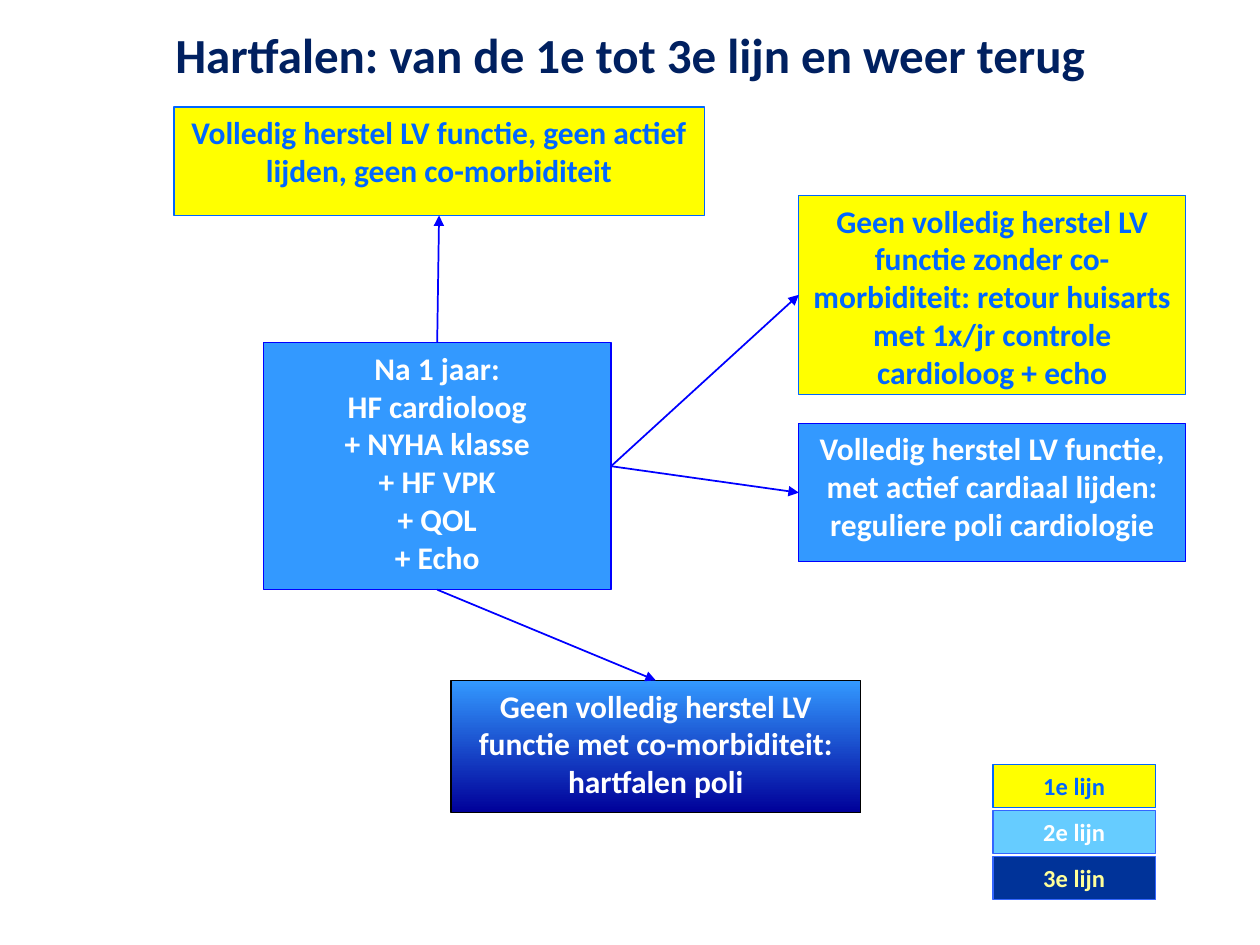
import dataclasses

import lxml.etree
import pptx
import pptx.dml.color
import pptx.enum.shapes
import pptx.enum.text
import pptx.oxml.ns
import pptx.util

COLUMNS, ROWS = 100, 75
CELL = pptx.util.Inches(0.1)
TOP, LEFT, BOTTOM, RIGHT = range(4)


def color(value):
    return pptx.dml.color.RGBColor.from_string(value)


@dataclasses.dataclass(frozen=True)
class Theme:
    font: str = "Calibri"
    title_size: int = 28
    step_size: int = 18
    legend_size: int = 14
    outline: float = 0.75
    arrow_width: float = 1
    arrow_color: str = "0000FF"
    title: tuple = ("FFFFFF", None, "002060")
    first_line: tuple = ("FFFF00", "0066FF", "0066FF")
    second_line: tuple = ("3399FF", "0000FF", "FFFFFF")
    third_line: tuple = (("3399FF", "000099"), "000000", "FFFFFF")
    legend_second: tuple = ("66CCFF", "3366FF", "FFFFFF")
    legend_third: tuple = ("003399", "3366FF", "FFFF99")


@dataclasses.dataclass(frozen=True)
class Box:
    left: float
    top: float
    width: float
    height: float

    def inner(self, left, top, width, height):
        return Box(self.left + left, self.top + top, width, height)

    def lengths(self):
        return [round(cells * CELL) for cells in dataclasses.astuple(self)]


THEME = Theme()


def apply_format(target, values):
    for name, value in values.items():
        setattr(target, name, value)


def paint(fill, fill_color):
    if isinstance(fill_color, tuple):
        fill.gradient()
        fill.gradient_angle = 270
        for position, (stop, value) in enumerate(zip(fill.gradient_stops, fill_color)):
            apply_format(stop, {"position": position})
            stop.color.rgb = color(value)
    else:
        fill.solid()
        fill.fore_color.rgb = color(fill_color)


def add_panel(slide, box, lines, style, size, anchor=pptx.enum.text.MSO_ANCHOR.TOP):
    fill_color, line_color, text_color = style
    shape = slide.shapes.add_shape(
        pptx.enum.shapes.MSO_SHAPE.RECTANGLE, *box.lengths()
    )
    shape.shadow.inherit = False
    paint(shape.fill, fill_color)
    if line_color:
        shape.line.color.rgb = color(line_color)
        shape.line.width = pptx.util.Pt(THEME.outline)
    else:
        shape.line.fill.background()
    text_frame = shape.text_frame
    apply_format(text_frame, {
        "text": "\n".join(lines), "word_wrap": True, "vertical_anchor": anchor,
    })
    for paragraph in text_frame.paragraphs:
        paragraph.alignment = pptx.enum.text.PP_ALIGN.CENTER
        font = paragraph.runs[0].font
        apply_format(font, {
            "name": THEME.font, "size": pptx.util.Pt(size), "bold": True,
        })
        font.color.rgb = color(text_color)
    return shape


def add_arrow(slide, start, start_side, end, end_side):
    connector = slide.shapes.add_connector(
        pptx.enum.shapes.MSO_CONNECTOR.STRAIGHT, 0, 0, 0, 0
    )
    connector.begin_connect(start, start_side)
    connector.end_connect(end, end_side)
    connector.line.color.rgb = color(THEME.arrow_color)
    connector.line.width = pptx.util.Pt(THEME.arrow_width)
    properties = connector._element.spPr
    outline = properties.find(pptx.oxml.ns.qn("a:ln"))
    lxml.etree.SubElement(outline, pptx.oxml.ns.qn("a:tailEnd"), type="triangle")
    lxml.etree.SubElement(properties, pptx.oxml.ns.qn("a:effectLst"))


def add_title(slide, box):
    add_panel(
        slide, box, ["Hartfalen: van de 1e tot 3e lijn en weer terug"],
        THEME.title, THEME.title_size, pptx.enum.text.MSO_ANCHOR.MIDDLE,
    )


def add_flow(slide, box):
    review = add_panel(
        slide, box.inner(7.1, 18.7, 27.6, 19.6),
        ["Na 1 jaar:", "HF cardioloog", "+ NYHA klasse", "+ HF VPK", "+ QOL", "+ Echo"],
        THEME.second_line, THEME.step_size,
    )
    outcomes = [
        (box.inner(0, 0, 42.1, 8.6), THEME.first_line, TOP, BOTTOM,
         "Volledig herstel LV functie, geen actief lijden, geen co-morbiditeit"),
        (box.inner(49.6, 7, 30.7, 15.8), THEME.first_line, RIGHT, LEFT,
         "Geen volledig herstel LV functie zonder co-morbiditeit: "
         "retour huisarts met 1x/jr controle cardioloog + echo"),
        (box.inner(49.6, 25.1, 30.7, 11), THEME.second_line, RIGHT, LEFT,
         "Volledig herstel LV functie, met actief cardiaal lijden: "
         "reguliere poli cardiologie"),
        (box.inner(22, 45.5, 32.5, 10.5), THEME.third_line, BOTTOM, TOP,
         "Geen volledig herstel LV functie met co-morbiditeit: hartfalen poli"),
    ]
    for place, style, review_side, outcome_side, text in outcomes:
        outcome = add_panel(slide, place, [text], style, THEME.step_size)
        add_arrow(slide, review, review_side, outcome, outcome_side)


def add_legend(slide, box):
    entries = [
        ("1e lijn", THEME.first_line),
        ("2e lijn", THEME.legend_second),
        ("3e lijn", THEME.legend_third),
    ]
    height = 3.4
    pitch = (box.height - height) / (len(entries) - 1)
    for index, (label, style) in enumerate(entries):
        place = box.inner(0, index * pitch, box.width, height)
        add_panel(slide, place, [label], style, THEME.legend_size)


def main():
    presentation = pptx.Presentation()
    apply_format(presentation, {
        "slide_width": COLUMNS * CELL, "slide_height": ROWS * CELL,
    })
    slide = presentation.slides.add_slide(presentation.slide_layouts[6])
    add_legend(slide, Box(78.8, 60.7, 12.9, 10.7))
    add_flow(slide, Box(13.8, 8.5, 80.3, 56))
    add_title(slide, Box(0, 1.4, COLUMNS, 5.7))
    presentation.save("out.pptx")


if __name__ == "__main__":
    main()
